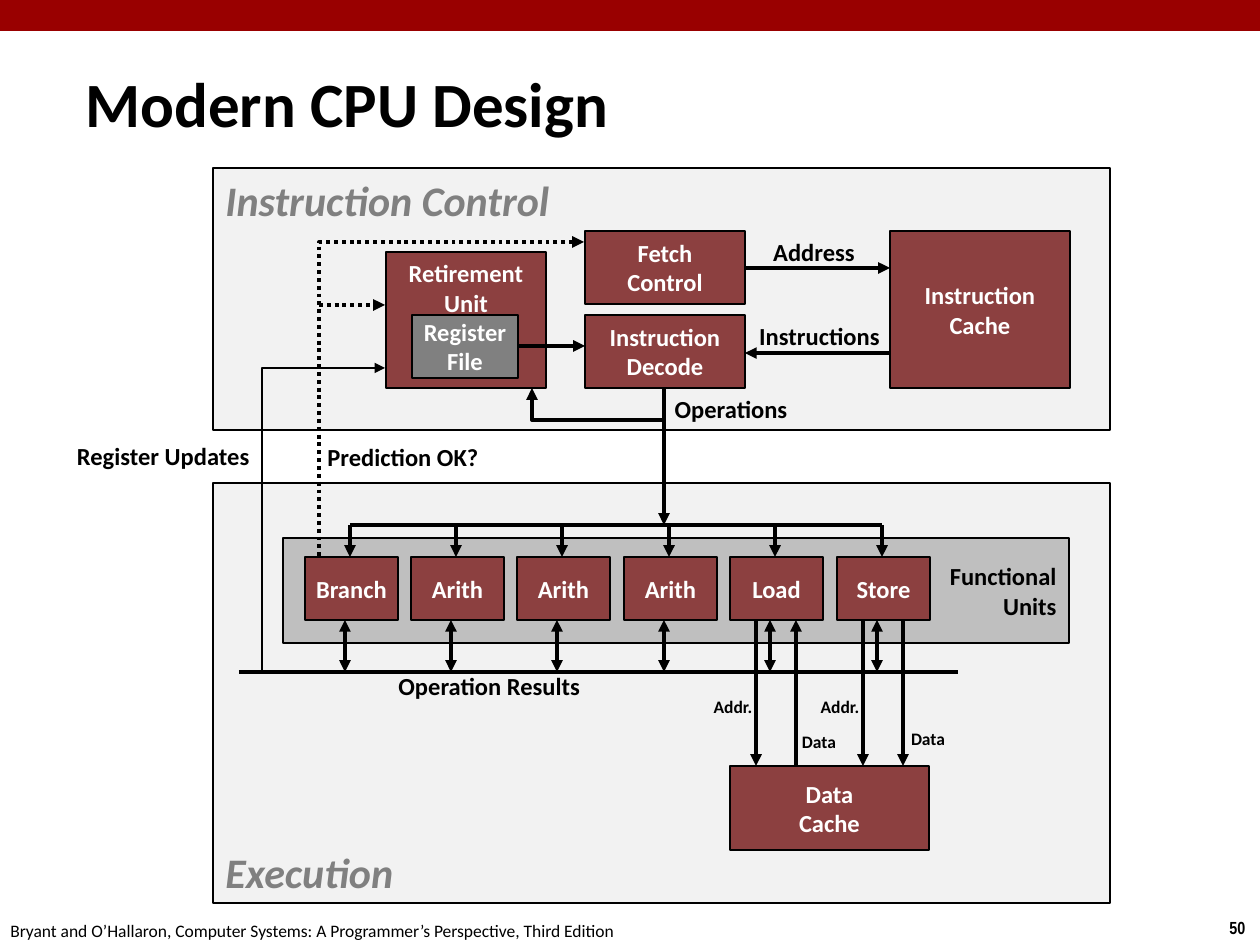
from dataclasses import dataclass

from lxml.etree import SubElement
from pptx import Presentation
from pptx.dml.color import RGBColor
from pptx.enum.dml import MSO_LINE_DASH_STYLE as Dash
from pptx.enum.shapes import MSO_CONNECTOR as Connector, MSO_SHAPE as Shape
from pptx.enum.text import MSO_ANCHOR as Anchor, PP_ALIGN as Align
from pptx.oxml.ns import qn
from pptx.util import Inches, Pt

PX = Inches(1) / 126
COLORS = {
    "banner": "990000",
    "unit": "8C4040",
    "register": "808080",
    "panel": "F2F2F2",
    "strip": "BFBFBF",
    "heading": "808080",
    "ink": "000000",
    "paper": "FFFFFF",
}


@dataclass
class Box:
    left: int
    top: int
    width: int
    height: int

    def inner(self, left, top, width, height):
        return Box(self.left + left, self.top + top, width, height)

    def point(self, x, y):
        return self.left + x, self.top + y

    def emu(self):
        return [px(value) for value in (self.left, self.top, self.width, self.height)]


def px(value):
    return round(value * PX)


def rgb(name):
    return RGBColor.from_string(COLORS[name])


def write(shape, text, size=14, color="ink", align=Align.LEFT, anchor=Anchor.TOP,
          bold=True, italic=False, font="Calibri"):
    frame = shape.text_frame
    frame.text = text
    frame.word_wrap = False
    frame.vertical_anchor = anchor
    for paragraph in frame.paragraphs:
        paragraph.alignment = align
        for run in paragraph.runs:
            run.font.name = font
            run.font.size = Pt(size)
            run.font.bold = bold
            run.font.italic = italic
            run.font.color.rgb = rgb(color)


def add_label(slide, box, text, **style):
    write(slide.shapes.add_textbox(*box.emu()), text, **style)


def add_block(slide, box, fill, line_width=0.75):
    shape = slide.shapes.add_shape(Shape.RECTANGLE, *box.emu())
    shape.shadow.inherit = False
    shape.fill.solid()
    shape.fill.fore_color.rgb = rgb(fill)
    if line_width:
        shape.line.color.rgb = rgb("ink")
        shape.line.width = Pt(line_width)
    else:
        shape.line.fill.background()
    return shape


def add_unit(slide, box, text, fill="unit", anchor=Anchor.MIDDLE):
    write(add_block(slide, box, fill), text, color="paper", align=Align.CENTER, anchor=anchor)


def add_panel(slide, box, heading, anchor):
    panel = add_block(slide, box, "panel", 1.5)
    write(panel, heading, size=24, color="heading", anchor=anchor, italic=True)


def add_wire(slide, box, points, ends="tail", width=2.25, dash=None):
    points = [box.point(*point) for point in points]
    if len(points) == 2:
        (x1, y1), (x2, y2) = points
        wire = slide.shapes.add_connector(Connector.STRAIGHT, px(x1), px(y1), px(x2), px(y2))
        SubElement(wire._element.spPr, qn("a:effectLst"))
    else:
        builder = slide.shapes.build_freeform(*points[0], scale=PX)
        builder.add_line_segments(points[1:], close=False)
        wire = builder.convert_to_shape()
        wire.fill.background()
        wire.shadow.inherit = False
    wire.line.color.rgb = rgb("ink")
    wire.line.width = Pt(width)
    if dash:
        wire.line.dash_style = dash
    for end in ends.split():
        SubElement(wire.line._get_or_add_ln(), qn(f"a:{end}End"), type="triangle")


def add_frame(slide, box):
    add_block(slide, box.inner(0, 0, box.width, 31), "banner", 0)
    add_label(slide, box.inner(1217, 911, 43, 34), "50", size=10, font="Arial Narrow")
    add_label(slide, box.inner(-2, 914, 640, 34),
              "Bryant and O’Hallaron, Computer Systems: A Programmer’s Perspective, Third Edition",
              size=10, bold=False)
    title = slide.shapes.title
    title.left, title.top, title.width, title.height = box.inner(73, 63, 808, 79).emu()
    write(title, "Modern CPU Design", size=36, anchor=Anchor.MIDDLE)


def add_instruction_control(slide, box):
    add_panel(slide, box, "Instruction Control", Anchor.TOP)
    add_unit(slide, box.inner(677, 63, 180, 157), "Instruction\nCache")
    add_unit(slide, box.inner(372, 63, 160, 73), "Fetch\nControl")
    add_unit(slide, box.inner(372, 147, 160, 73), "Instruction\nDecode")
    add_unit(slide, box.inner(173, 84, 160, 136), "Retirement\nUnit", anchor=Anchor.TOP)
    add_unit(slide, box.inner(199, 147, 106, 63), "Register\nFile", fill="register")
    add_wire(slide, box, [(532, 100), (677, 100)])
    add_wire(slide, box, [(677, 185), (532, 185)])
    add_wire(slide, box, [(305, 178), (372, 178)])
    add_label(slide, box.inner(547, 63, 108, 43), "Address", align=Align.CENTER)
    add_label(slide, box.inner(533, 147, 147, 43), "Instructions", align=Align.CENTER)


def add_execution(slide, box):
    add_panel(slide, box, "Execution", Anchor.BOTTOM)
    strip = add_block(slide, box.inner(70, 55, 786, 105), "strip")
    write(strip, "Functional\nUnits", align=Align.RIGHT, anchor=Anchor.MIDDLE)

    names = ["Branch", "Arith", "Arith", "Arith", "Load", "Store"]
    lefts = [92 + 532 * index // 5 for index in range(len(names))]
    bus, top, bottom, results, cache = 42, 74, 137, 189, 283
    for name, left in zip(names, lefts):
        add_unit(slide, box.inner(left, top, 93, bottom - top), name)
        add_wire(slide, box, [(left + 45, bus), (left + 45, top)])
        add_wire(slide, box, [(left + 40, bottom), (left + 40, results)], ends="head tail")
    add_wire(slide, box, [(lefts[0] + 45, bus), (lefts[-1] + 45, bus)], ends="")
    add_wire(slide, box, [(26, results), (745, results)], ends="")
    add_label(slide, box.inner(173, 182, 209, 43), "Operation Results")

    load, store = lefts[-2:]
    add_unit(slide, box.inner(load, cache, 199, 84), "Data\nCache")
    for left, data_ends, data_x, data_y in [(load, "head", 59, 242), (store, "tail", 61, 239)]:
        add_wire(slide, box, [(left + 26, bottom), (left + 26, cache)])
        add_wire(slide, box, [(left + 66, bottom), (left + 66, cache)], ends=data_ends)
        add_label(slide, box.inner(left - 30, 207, 66, 34), "Addr.", size=10, align=Align.CENTER)
        add_label(slide, box.inner(left + data_x, data_y, 60, 34), "Data", size=10,
                  align=Align.CENTER)


def add_panel_links(slide, box):
    add_wire(slide, box, [(451, 220), (451, 357)])
    add_wire(slide, box, [(451, 252), (319, 252), (319, 220)])
    add_label(slide, box.inner(448, 220, 140, 43), "Operations", align=Align.CENTER)
    add_wire(slide, box, [(371, 74), (106, 74), (106, 389)], ends="head", dash=Dash.ROUND_DOT)
    add_wire(slide, box, [(106, 137), (172, 137)], dash=Dash.ROUND_DOT)
    add_label(slide, box.inner(102, 268, 178, 43), "Prediction OK?")
    add_wire(slide, box, [(172, 200), (49, 200), (49, 504)], ends="head", width=1.5)
    add_label(slide, box.inner(-150, 267, 199, 43), "Register Updates", align=Align.RIGHT)


def main():
    presentation = Presentation()
    page = Box(0, 0, 1260, 945)
    presentation.slide_width, presentation.slide_height = px(page.width), px(page.height)
    slide = presentation.slides.add_slide(presentation.slide_layouts[5])
    diagram = page.inner(213, 168, 897, 735)
    add_frame(slide, page)
    add_execution(slide, diagram.inner(0, 315, 897, 420))
    add_instruction_control(slide, diagram.inner(0, 0, 897, 262))
    add_panel_links(slide, diagram)
    presentation.save("out.pptx")


if __name__ == "__main__":
    main()
